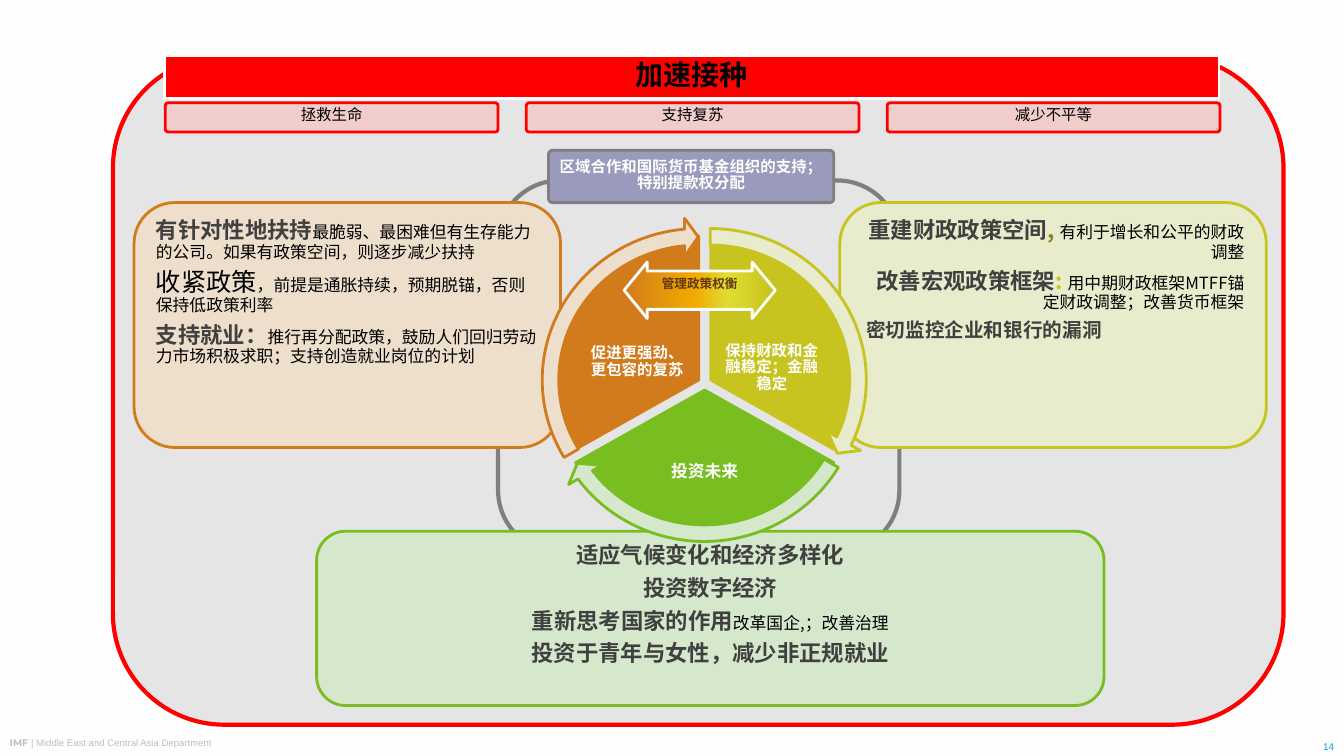
import math
from dataclasses import dataclass

from lxml import etree
from pptx import Presentation
from pptx.dml.color import RGBColor
from pptx.enum.shapes import MSO_SHAPE
from pptx.enum.text import MSO_ANCHOR, MSO_AUTO_SIZE, PP_ALIGN
from pptx.oxml.ns import qn
from pptx.util import Pt

ROUND, CIRCULAR = MSO_SHAPE.ROUNDED_RECTANGLE, MSO_SHAPE.CIRCULAR_ARROW
DOUBLE_ARROW = MSO_SHAPE.LEFT_RIGHT_ARROW
LEFT, CENTER, RIGHT = PP_ALIGN.LEFT, PP_ALIGN.CENTER, PP_ALIGN.RIGHT
TOP, MIDDLE, BOTTOM = MSO_ANCHOR.TOP, MSO_ANCHOR.MIDDLE, MSO_ANCHOR.BOTTOM

PX = 9144  # EMU per px, 100 px to the inch
CJK = "Noto Sans CJK SC"
COLORS = {
    "paper": "FEFEFE", "frame": "E5E5E5", "red": "FF0000", "pink": "F1CDCC",
    "ring": "7F7F7F", "support": "9A9ABC", "black": "000000", "dark": "404040",
    "orange": "D17B1D", "orange_light": "EEDFCC", "brown": "623A0E",
    "yellow": "C7C41F", "yellow_light": "E8EBCC", "olive": "898615",
    "green": "78BE20", "green_light": "D6E8CC",
    "amber": "F2A900", "lemon": "DFDB31", "footer": "BEBEBE", "page": "009CDE",
}
Box = tuple[int, int, int, int]


@dataclass
class Run:
    text: str
    size: float
    color: str = "black"
    bold: bool = False
    font: str = CJK


@dataclass
class Para:
    runs: list[Run]
    align: PP_ALIGN = CENTER
    after: int = 0
    spacing: float = 0.9


@dataclass
class Panel:
    box: Box
    color: str
    paras: list[Para]


@dataclass
class Sector:
    color: str
    center: tuple[int, int]
    start: int  # degrees, clockwise from the right
    insets: Box
    label: Run
    arrow_at: tuple[int, int]
    arrow_angles: tuple[float, float]  # head, tail


def rgb(name: str) -> RGBColor:
    return RGBColor.from_string(COLORS[name])


def set_font(font, run: Run) -> None:
    font.size, font.bold, font.name = Pt(run.size), run.bold, run.font
    font.color.rgb = rgb(run.color)
    font._element.get_or_change_to_solidFill()
    font._element.find(qn("a:latin")).addnext(
        etree.Element(qn("a:ea"), typeface=run.font))


def write(sp, paras: list[Para], anchor=MIDDLE, insets: Box = (10, 5, 10, 5)) -> None:
    tf = sp.text_frame
    tf.word_wrap, tf.auto_size, tf.vertical_anchor = True, MSO_AUTO_SIZE.NONE, anchor
    tf.margin_left, tf.margin_top, tf.margin_right, tf.margin_bottom = (
        v * PX for v in insets)
    for i, para in enumerate(paras):
        p = tf.add_paragraph() if i else tf.paragraphs[0]
        p.alignment, p.line_spacing = para.align, para.spacing
        p.space_before, p.space_after = Pt(0), Pt(para.after)
        for run in para.runs:
            r = p.add_run()
            r.text = run.text
            set_font(p.font if len(para.runs) == 1 else r.font, run)


def paint(sp, fill: str | None, line: str, width: int = 2) -> None:
    if fill:
        sp.fill.solid()
        sp.fill.fore_color.rgb = rgb(fill)
    else:
        sp.fill.background()
    sp.line.color.rgb = rgb(line)
    sp.line.width = Pt(width)
    sp.shadow.inherit = False


def add_shape(kind, box: Box, fill: str | None, line: str, width: int = 2,
              adj: tuple[float, ...] = ()):
    sp = shapes.add_shape(kind, *(v * PX for v in box))
    for i, value in enumerate(adj):
        sp.adjustments[i] = value
    paint(sp, fill, line, width)
    return sp


def add_text(box: Box, para: Para, anchor) -> None:
    write(shapes.add_textbox(*(v * PX for v in box)), [para], anchor)


def add_panel(panel: Panel) -> None:
    sp = add_shape(ROUND, panel.box, panel.color + "_light", panel.color)
    write(sp, panel.paras, TOP)


def add_sector(s: Sector) -> None:
    cx, cy = s.center
    rx, ry = 147.5, 143.5
    arc = [(cx + rx * math.cos(math.radians(a)), cy + ry * math.sin(math.radians(a)))
           for a in range(s.start, s.start + 121, 3)]
    builder = shapes.build_freeform(cx, cy, scale=PX)
    builder.add_line_segments(arc, close=True)
    sp = builder.convert_to_shape()
    paint(sp, s.color, s.color)
    write(sp, [Para([s.label])], MIDDLE, s.insets)


def add_cycle_arrow(s: Sector) -> None:
    # Adjustment units: 0.6 per degree
    head, tail = (a * 0.6 for a in s.arrow_angles)
    add_shape(CIRCULAR, (*s.arrow_at, 331, 322), s.color + "_light", s.color,
              adj=(0.051, 3.275, head, tail, 0.059))


def strong(text: str, size: int = 16, color: str = "dark") -> Run:
    return Run(text, size, color, True)


def item(*runs: Run, align: PP_ALIGN = LEFT) -> Para:
    return Para(list(runs), align, 6)


PANELS = [
    Panel((833, 201, 423, 243), "yellow", [
        item(strong("重建财政政策空间"), strong(", ", color="olive"),
             Run("有利于增长和公平的财政调整", 12), align=RIGHT),
        item(strong("改善宏观政策框架"), strong(": ", color="yellow"),
             Run("用中期财政框架MTFF锚定财政调整；改善货币框架", 12), align=RIGHT),
        item(strong(" 密切监控企业和银行的漏洞", 14)),
    ]),
    Panel((314, 527, 781, 173), "green", [
        item(strong("适应气候变化和经济多样化"), align=CENTER),
        item(strong("投资数字经济"), align=CENTER),
        item(strong("重新思考国家的作用"), Run("改革国企,；改善治理", 12), align=CENTER),
        item(strong("投资于青年与女性，减少非正规就业"), align=CENTER),
    ]),
    Panel((133, 201, 423, 243), "orange", [
        item(strong("有针对性地扶持"),
             Run("最脆弱、最困难但有生存能力的公司。如果有政策空间，则逐步减少扶持", 12)),
        item(Run("收紧政策", 18), Run("，前提是通胀持续，预期脱锚，否则保持低政策利率", 12)),
        item(strong("支持就业："),
             Run("推行再分配政策，鼓励人们回归劳动力市场积极求职；支持创造就业岗位的计划", 12)),
    ]),
]
GREEN = Sector("green", (699, 387), 30, (0, 20, 0, 0),
               strong("投资未来", 12, "paper"), (533, 226), (144.53, 30))
ORANGE = Sector("orange", (693, 377), 150, (35, 35, 10, 0),
                strong("促进更强劲、更包容的复苏", 11, "paper"), (527, 216), (264.55, 150))
YELLOW = Sector("yellow", (705, 377), 270, (9, 47, 35, 0),
                strong("保持财政和金融稳定；金融稳定", 11, "paper"), (539, 216), (24.54, 270))

prs = Presentation()
prs.slide_width, prs.slide_height = 1333 * PX, 750 * PX
slide = prs.slides.add_slide(prs.slide_layouts[5])
shapes = slide.shapes
slide.background.fill.solid()
slide.background.fill.fore_color.rgb = rgb("paper")

# Footer
add_text((0, 726, 1000, 22), Para([
    Run("IMF ", 6.8, "footer", True, "Montserrat"),
    Run("| Middle East and Central Asia Department", 6.8, "footer", font="Arial"),
], LEFT, spacing=1.0), TOP)
add_text((1201, 728, 132, 23),
         Para([Run("14", 7, "page", font="Arial")], RIGHT, spacing=1.0), BOTTOM)

# Outer frame, behind the title
frame = add_shape(ROUND, (112, 56, 1161, 663), "frame", "red", 3)
shapes._spTree.insert(2, frame._element)

# Title bar and the three goals under it
title = shapes.title
title.left, title.top, title.width, title.height = (v * PX for v in (163, 55, 1046, 43))
paint(title, "red", "paper")
write(title, [Para([strong("加速接种", 20, "black")])], insets=(9, 0, 9, 2))
for i, goal in enumerate(("拯救生命", "支持复苏", "减少不平等")):
    sp = add_shape(ROUND, (164 + 358 * i, 102, 330, 29), "pink", "red", adj=(0.1,))
    write(sp, [Para([Run(goal, 11)])], insets=(6, 0, 6, 4))

# Ring and support box
add_shape(ROUND, (494, 179, 398, 369), None, "ring", 3)
support = add_shape(ROUND, (544, 149, 283, 52), "support", "ring", adj=(0.08,))
write(support, [Para([strong("区域合作和国际货币基金组织的支持；特别提款权分配", 11, "paper")])],
      insets=(6, 4, 6, 6))

# Policy panels around the cycle
add_sector(GREEN)
for panel in PANELS:
    add_panel(panel)

# Cycle
add_cycle_arrow(GREEN)
add_sector(ORANGE)
add_cycle_arrow(ORANGE)
add_sector(YELLOW)

# Trade-off arrow across the two upper sectors
tradeoff = add_shape(DOUBLE_ARROW, (619, 260, 150, 56), "yellow", "paper", adj=(0.679, 0.41))
tradeoff.fill.gradient()
tradeoff.fill.gradient_angle = 0
stops = tradeoff._element.spPr.find(qn("a:gradFill")).find(qn("a:gsLst"))
stops.clear()
for pos, name in ((0, "orange"), (46, "amber"), (68, "lemon"), (100, "yellow")):
    stop = etree.SubElement(stops, qn("a:gs"), pos=str(pos * 1000))
    etree.SubElement(stop, qn("a:srgbClr"), val=COLORS[name])
write(tradeoff, [Para([strong("管理政策权衡", 9, "brown")], spacing=1.0)], TOP)
add_cycle_arrow(YELLOW)

prs.save("out.pptx")
